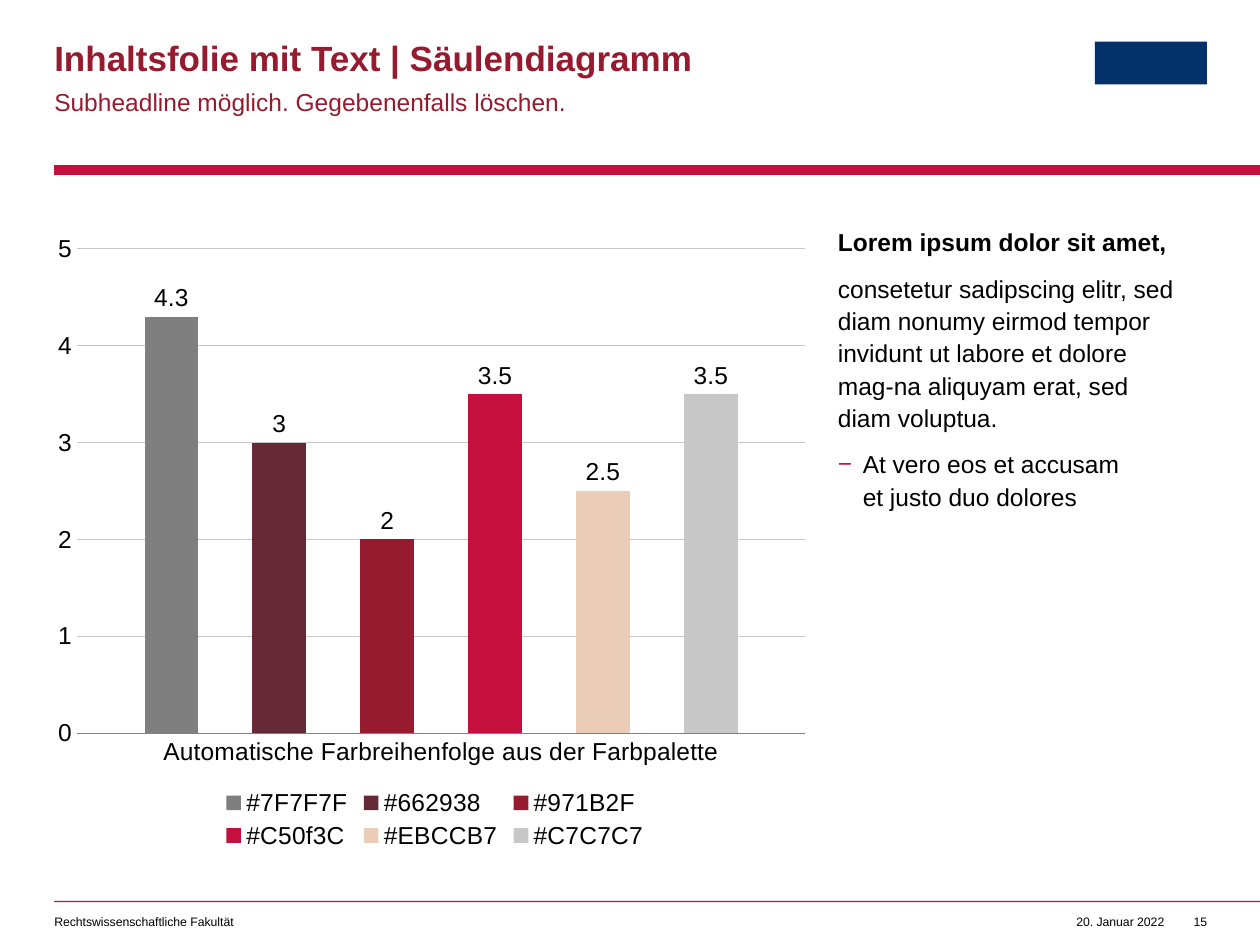
from lxml import etree
from pptx import Presentation
from pptx.chart.data import CategoryChartData
from pptx.dml.color import RGBColor
from pptx.enum.chart import XL_CHART_TYPE, XL_LABEL_POSITION, XL_LEGEND_POSITION, XL_TICK_MARK
from pptx.enum.shapes import MSO_SHAPE
from pptx.enum.text import MSO_ANCHOR, MSO_AUTO_SIZE, PP_ALIGN
from pptx.oxml.ns import qn
from pptx.util import Pt

COLORS = {"text": "000000", "red": "C50F3C", "wine": "971B2F", "navy": "04316A",
          "axis": "7F7F7F", "grid": "C7C7C7"}
FONT = "Arial"
LEFT, TOP, HEIGHT = 31, 128.2, 360
SERIES = [("#7F7F7F", 4.3), ("#662938", 3), ("#971B2F", 2),
          ("#C50f3C", 3.5), ("#EBCCB7", 2.5), ("#C7C7C7", 3.5)]


def rgb(name):
    return RGBColor.from_string(COLORS[name])


class SlideBuilder:
    def __init__(self, slide):
        self.s = slide

    def style(self, font, size, color="text", bold=False):
        font.name, font.size, font.bold = FONT, Pt(size), bold
        font.color.rgb = rgb(color)

    def rect(self, box, color):
        sp = self.s.shapes.add_shape(MSO_SHAPE.RECTANGLE, *map(Pt, box))
        sp.shadow.inherit = False
        sp.fill.solid()
        sp.fill.fore_color.rgb = rgb(color)
        sp.line.fill.background()

    def frame(self, sp, right=0, wrap=True):
        tf = sp.text_frame
        tf.margin_left = tf.margin_top = tf.margin_bottom = 0
        tf.margin_right = Pt(right)
        tf.word_wrap = wrap
        tf.auto_size = MSO_AUTO_SIZE.NONE
        tf.vertical_anchor = MSO_ANCHOR.TOP
        return tf

    def footer(self, box, text, align=PP_ALIGN.LEFT, wrap=True):
        tf = self.frame(self.s.shapes.add_textbox(*map(Pt, box)), wrap=wrap)
        p = tf.paragraphs[0]
        p.alignment = align
        r = p.add_run()
        r.text = text
        self.style(r.font, 7)

    def placeholder(self, idx, box, paragraphs, size=14, color="text", right=0,
                    spacing=1.1, after=8):
        """Each paragraph is (lines, bold, bullet)."""
        sp = self.s.placeholders[idx]
        sp.left, sp.top, sp.width, sp.height = map(Pt, box)
        tf = self.frame(sp, right)
        for i, (lines, bold, bullet) in enumerate(paragraphs):
            p = tf.add_paragraph() if i else tf.paragraphs[0]
            p.alignment = PP_ALIGN.LEFT
            p.line_spacing, p.space_before, p.space_after = spacing, Pt(0), Pt(after)
            self.bullet(p, bullet)
            for n, line in enumerate(lines):
                if n:
                    p.add_line_break()
                r = p.add_run()
                r.text = line
                self.style(r.font, size, color, bold)

    def bullet(self, p, char):
        if char:
            p.level = 1
        indent = Pt(14.2) if char else 0
        pPr = p._p.get_or_add_pPr()
        pPr.set("marL", str(indent))
        pPr.set("indent", str(-indent))
        if char:
            clr = etree.SubElement(pPr, qn("a:buClr"))
            etree.SubElement(clr, qn("a:srgbClr"), val=COLORS["red"])
            etree.SubElement(pPr, qn("a:buFont"), typeface=FONT)
            etree.SubElement(pPr, qn("a:buChar"), char=char)
        else:
            etree.SubElement(pPr, qn("a:buNone"))

    def column_chart(self, box, category, series):
        data = CategoryChartData()
        data.categories = [category]
        for name, value in series:
            data.add_series(name, [value])
        chart = self.s.shapes.add_chart(
            XL_CHART_TYPE.COLUMN_CLUSTERED, *map(Pt, box), data).chart
        self.style(chart.font, 14)
        chart.has_title = False

        # Legend
        chart.has_legend = True
        chart.legend.position = XL_LEGEND_POSITION.BOTTOM
        chart.legend.include_in_layout = False
        self.style(chart.legend.font, 14)

        # Axes
        cat, val = chart.category_axis, chart.value_axis
        for axis in (cat, val):
            axis.major_tick_mark = axis.minor_tick_mark = XL_TICK_MARK.NONE
            self.style(axis.tick_labels.font, 14)
        val.minimum_scale, val.maximum_scale, val.major_unit = 0, 5, 1
        val.format.line.fill.background()
        for line, color in ((cat.format.line, "axis"),
                            (val.major_gridlines.format.line, "grid")):
            line.color.rgb = rgb(color)
            line.width = Pt(0.5)

        # Columns and value labels
        plot = chart.plots[0]
        plot.gap_width, plot.overlap, plot.vary_by_categories = 250, -100, False
        for ser in plot.series:
            ser.format.fill.solid()
            ser.format.fill.fore_color.rgb = RGBColor.from_string(ser.name[1:].upper())
            labels = ser.data_labels
            labels.show_value = True
            labels.position = XL_LABEL_POSITION.OUTSIDE_END
            self.style(labels.font, 14)

        # Inner plot area
        area = chart._chartSpace.chart.plotArea
        for old in area.findall(qn("c:layout")):
            area.remove(old)
        layout = etree.Element(qn("c:layout"))
        area.insert(0, layout)
        manual = etree.SubElement(layout, qn("c:manualLayout"))
        for tag, value in (("layoutTarget", "inner"), ("xMode", "edge"), ("yMode", "edge"),
                           ("x", "0.03"), ("y", "0.039"), ("w", "0.957"), ("h", "0.769")):
            etree.SubElement(manual, qn(f"c:{tag}"), val=value)


def main():
    prs = Presentation()
    prs.slide_width, prs.slide_height = Pt(720), Pt(540)
    b = SlideBuilder(prs.slides.add_slide(prs.slide_layouts[3]))

    # Rules and logo block
    b.rect((LEFT, 94.3, 720 - LEFT, 5.7), "red")
    b.rect((LEFT, 514.8, 720 - LEFT, 0.8), "red")
    b.rect((625.7, 23.8, 64, 24.4), "navy")

    # Footer
    b.footer((614.2, 522.7, 51.1, 8.6), "20. Januar 2022", PP_ALIGN.RIGHT, wrap=False)
    b.footer((LEFT, 522.7, 323.3, 8.6), "Rechtswissenschaftliche Fakultät")
    b.footer((675.4, 522.7, 14.4, 8.6), "15", PP_ALIGN.RIGHT, wrap=False)

    # Headings
    b.placeholder(0, (LEFT, 23.8, 404, 21.6),
                  [(["Inhaltsfolie mit Text | Säulendiagramm"], True, None)],
                  size=20, color="wine", spacing=0.9, after=0)
    b.placeholder(1, (LEFT, 48.2, 404, 17.3),
                  [(["Subheadline möglich. Gegebenenfalls löschen."], False, None)],
                  color="wine", right=28)

    # Text column
    b.placeholder(2, (478.8, TOP, 211, HEIGHT), [
        (["Lorem ipsum dolor sit amet,"], True, None),
        (["consetetur sadipscing elitr, sed diam nonumy eirmod tempor invidunt ut labore "
          "et dolore mag-na aliquyam erat, sed diam voluptua."], False, None),
        (["At vero eos et accusam", "et justo duo dolores"], False, "−"),
    ], right=14.2)

    # Chart
    b.column_chart((LEFT, TOP, 434.9, HEIGHT),
                   "Automatische Farbreihenfolge aus der Farbpalette", SERIES)
    prs.save("out.pptx")


if __name__ == "__main__":
    main()
